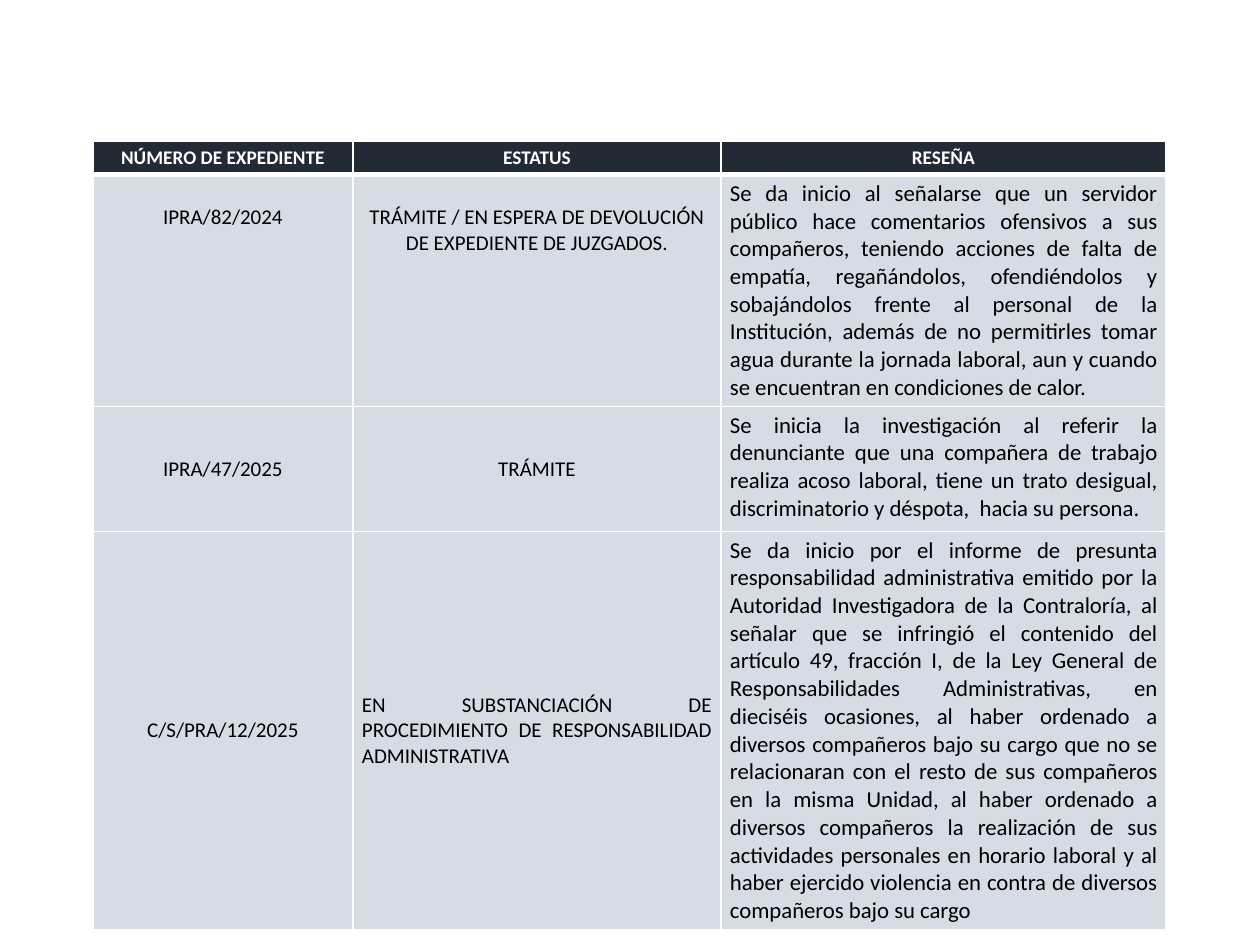
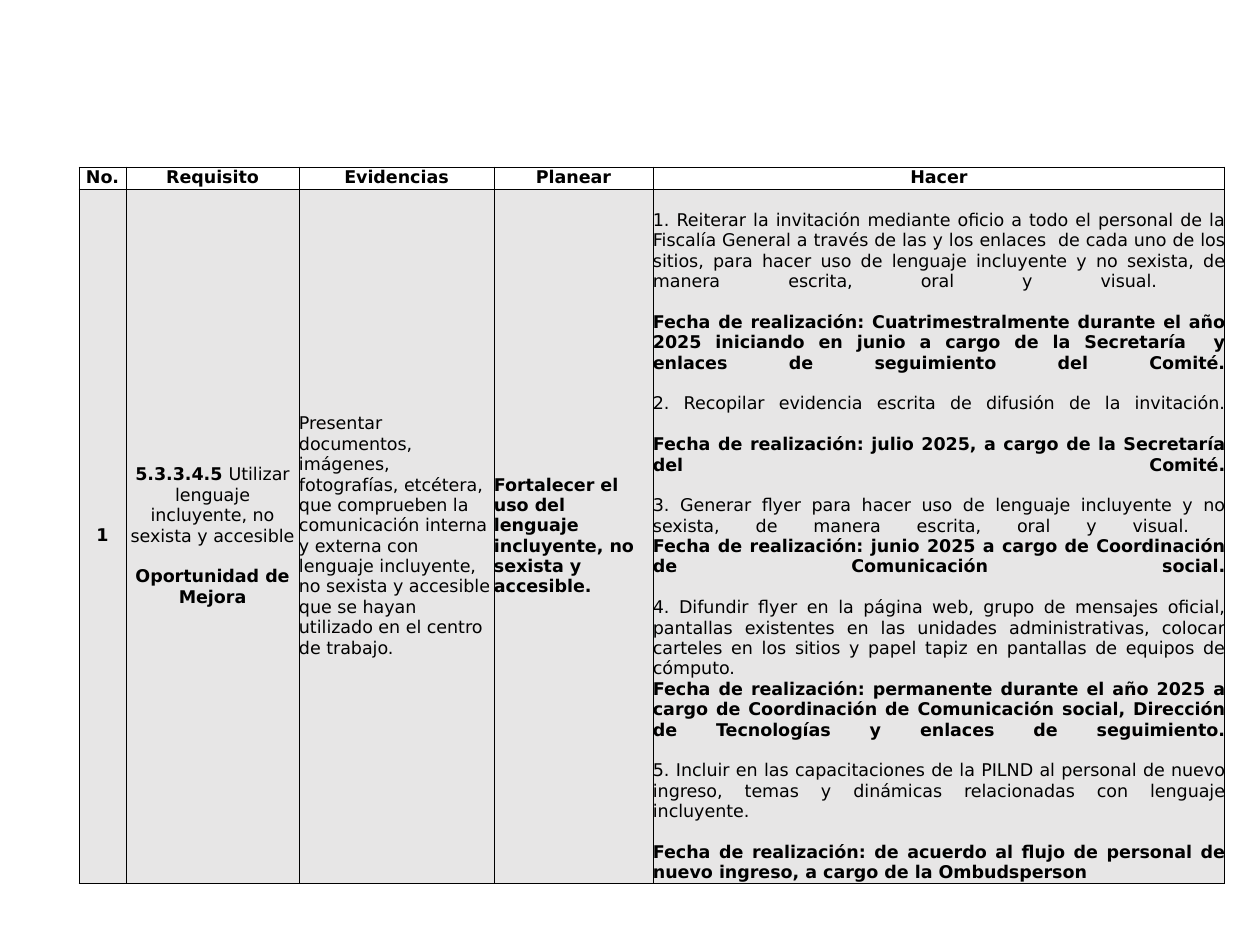
from dataclasses import dataclass

from lxml.etree import SubElement
from pptx import Presentation
from pptx.dml.color import RGBColor
from pptx.enum.text import MSO_ANCHOR, PP_ALIGN
from pptx.oxml.ns import qn
from pptx.util import Emu, Pt

COLORS = {
    "white": "FFFFFF",
    "black": "000000",
    "navy": "222A35",
    "mist": "D6DCE5",
    "gray": "E7E6E6",
}
LEFT, CENTER, JUSTIFY = PP_ALIGN.LEFT, PP_ALIGN.CENTER, PP_ALIGN.JUSTIFY
TOP, MIDDLE, BOTTOM = MSO_ANCHOR.TOP, MSO_ANCHOR.MIDDLE, MSO_ANCHOR.BOTTOM


def px(length):
    return Emu(round(length * 914400 / 126))


@dataclass
class Entry:
    """Content of one table cell; ** switches bold on and off."""

    paragraphs: tuple
    size: int
    align: PP_ALIGN = CENTER
    anchor: MSO_ANCHOR = MIDDLE
    top: int = None
    gap: float = 0


@dataclass
class TableStyle:
    """Look shared by all the cells of one table."""

    font: str
    border: str
    border_width: float
    header_rule: float
    header_fill: str
    header_ink: str
    body_fill: str
    margins: tuple


class Builder:
    """Hold the deck, the current slide and the table style."""

    def __init__(self):
        self.deck = Presentation()
        self.deck.slide_width, self.deck.slide_height = px(1260), px(945)
        self.page = None
        self.style = None

    def add_page(self, style):
        self.page = self.deck.slides.add_slide(self.deck.slide_layouts[6])
        self.style = style

    def add_grid(self, left, top, widths, heights, rows):
        frame = self.page.shapes.add_table(
            len(rows), len(widths), px(left), px(top), px(sum(widths)), px(sum(heights))
        )
        table = frame.table
        table.first_row = table.horz_banding = False
        for column, width in zip(table.columns, widths):
            column.width = px(width)
        for row, height in zip(table.rows, heights):
            row.height = px(height)
        for row_index, entries in enumerate(rows):
            for column_index, entry in enumerate(entries):
                self.fill_cell(table.cell(row_index, column_index), entry, row_index)

    def fill_cell(self, cell, entry, row_index):
        style = self.style
        side, edge = style.margins
        cell.margin_left = cell.margin_right = px(side)
        cell.margin_top = px(edge if entry.top is None else entry.top)
        cell.margin_bottom = px(edge)
        cell.vertical_anchor = entry.anchor
        self.add_borders(cell, row_index)
        fill = style.body_fill if row_index else style.header_fill
        cell.fill.solid()
        cell.fill.fore_color.rgb = RGBColor.from_string(COLORS[fill])
        ink = "black" if row_index else style.header_ink
        for index, text in enumerate(entry.paragraphs):
            frame = cell.text_frame
            para = frame.add_paragraph() if index else frame.paragraphs[0]
            para.alignment = entry.align
            para.space_before = Pt(entry.gap if index else 0)
            para.font.size = Pt(entry.size)
            para.font.name = style.font
            para.font.color.rgb = RGBColor.from_string(COLORS[ink])
            self.add_spans(para, text)

    def add_spans(self, para, text):
        for index, part in enumerate(text.split("**")):
            for line_index, line in enumerate(part.split("\n")):
                if line_index:
                    para.add_line_break()
                if line:
                    span = para.add_run()
                    span.text = line
                    span.font.bold = index % 2 == 1

    def add_borders(self, cell, row_index):
        style = self.style
        thick_side = {0: "B", 1: "T"}.get(row_index)
        properties = cell._tc.get_or_add_tcPr()
        for side in "LRTB":
            width = style.header_rule if side == thick_side else style.border_width
            line = SubElement(properties, qn(f"a:ln{side}"), w=str(Pt(width)))
            fill = SubElement(line, qn("a:solidFill"))
            SubElement(fill, qn("a:srgbClr"), val=COLORS[style.border])


def header(names, size):
    return [Entry((f"**{name}**",), size) for name in names]


def case_row(number, status, summary, status_align=CENTER, **placing):
    return [
        Entry((number,), 12, **placing),
        Entry((status,), 12, status_align, **placing),
        Entry((summary,), 13, JUSTIFY, TOP),
    ]


CASES = [
    header(("NÚMERO DE EXPEDIENTE", "ESTATUS", "RESEÑA"), 11),
    case_row(
        "IPRA/82/2024",
        "TRÁMITE / EN ESPERA DE DEVOLUCIÓN DE EXPEDIENTE DE JUZGADOS.",
        "Se da inicio al señalarse que un servidor público hace comentarios ofensivos a sus "
        "compañeros, teniendo acciones de falta de empatía, regañándolos, ofendiéndolos y "
        "sobajándolos frente al personal de la Institución, además de no permitirles tomar "
        "agua durante la jornada laboral, aun y cuando se encuentran en condiciones de calor.",
        anchor=TOP,
        top=30,
    ),
    case_row(
        "IPRA/47/2025",
        "TRÁMITE",
        "Se inicia la investigación al referir la denunciante que una compañera de trabajo "
        "realiza acoso laboral, tiene un trato desigual, discriminatorio y déspota,  hacia "
        "su persona.",
    ),
    case_row(
        "C/S/PRA/12/2025",
        "EN SUBSTANCIACIÓN DE PROCEDIMIENTO DE RESPONSABILIDAD ADMINISTRATIVA",
        "Se da inicio por el informe de presunta responsabilidad administrativa emitido por la "
        "Autoridad Investigadora de la Contraloría, al señalar que se infringió el contenido "
        "del artículo 49, fracción I, de la Ley General de Responsabilidades Administrativas, "
        "en dieciséis ocasiones, al haber ordenado a diversos compañeros bajo su cargo que no "
        "se relacionaran con el resto de sus compañeros en la misma Unidad, al haber ordenado "
        "a diversos compañeros la realización de sus actividades personales en horario laboral "
        "y al haber ejercido violencia en contra de diversos compañeros bajo su cargo",
        JUSTIFY,
    ),
]

ACTIONS = (
    (
        "1. Reiterar la invitación mediante oficio a todo el personal de la Fiscalía General a "
        "través de las y los enlaces  de cada uno de los sitios, para hacer uso de lenguaje "
        "incluyente y no sexista, de manera escrita, oral y visual. \n\n",
        "Cuatrimestralmente durante el año 2025 iniciando en junio a cargo de la Secretaría  y "
        "enlaces de seguimiento del Comité.",
    ),
    (
        "2. Recopilar evidencia escrita de difusión de la invitación.\n\n",
        "julio 2025, a cargo de la Secretaría del Comité.",
    ),
    (
        "3. Generar flyer para hacer uso de lenguaje incluyente y no sexista, de manera "
        "escrita, oral y visual. \n",
        "junio 2025 a cargo de Coordinación de Comunicación social.",
    ),
    (
        "4. Difundir flyer en la página web, grupo de mensajes oficial, pantallas existentes "
        "en las unidades administrativas, colocar carteles en los sitios y papel tapiz en "
        "pantallas de equipos de cómputo.\n",
        "permanente durante el año 2025 a cargo de Coordinación de Comunicación social, "
        "Dirección de Tecnologías y enlaces de seguimiento.",
    ),
    (
        "5. Incluir en las capacitaciones de la PILND al personal de nuevo ingreso, temas y "
        "dinámicas relacionadas con lenguaje incluyente. \n\n",
        "de acuerdo al flujo de personal de nuevo ingreso, a cargo de la Ombudsperson",
    ),
)
ACTION_TEXT = "\n\n".join(
    f"{action}**Fecha de realización: {date}**" for action, date in ACTIONS
)

PLAN = [
    header(("No.", "Requisito", "Evidencias", "Planear", "Hacer"), 10),
    [
        Entry(("**1**",), 10),
        Entry(
            (
                "**5.3.3.4.5 **Utilizar lenguaje incluyente, no sexista y accesible",
                "**Oportunidad de Mejora**",
            ),
            10,
            gap=11.6,
        ),
        Entry(
            (
                "Presentar documentos, imágenes, fotografías, etcétera, que comprueben la "
                "comunicación interna y externa con lenguaje incluyente, no sexista y accesible "
                "que se hayan utilizado en el centro de trabajo.",
            ),
            10,
            LEFT,
        ),
        Entry(
            ("**Fortalecer el uso del lenguaje incluyente, no sexista y accesible.**",), 10, LEFT
        ),
        Entry((ACTION_TEXT,), 10, JUSTIFY, BOTTOM),
    ],
]


def main():
    builder = Builder()
    builder.add_page(
        TableStyle("Calibri", "white", 1, 3, "navy", "white", "mist", (9, 5))
    )
    builder.add_grid(93, 141, (260, 368, 445), (32, 228, 125, 392), CASES)
    builder.add_page(
        TableStyle("DejaVu Sans", "black", 0.5, 0.5, "white", "black", "gray", (0, 0))
    )
    builder.add_grid(79, 167, (47, 173, 195, 159, 572), (22, 694), PLAN)
    builder.deck.save("out.pptx")


if __name__ == "__main__":
    main()
